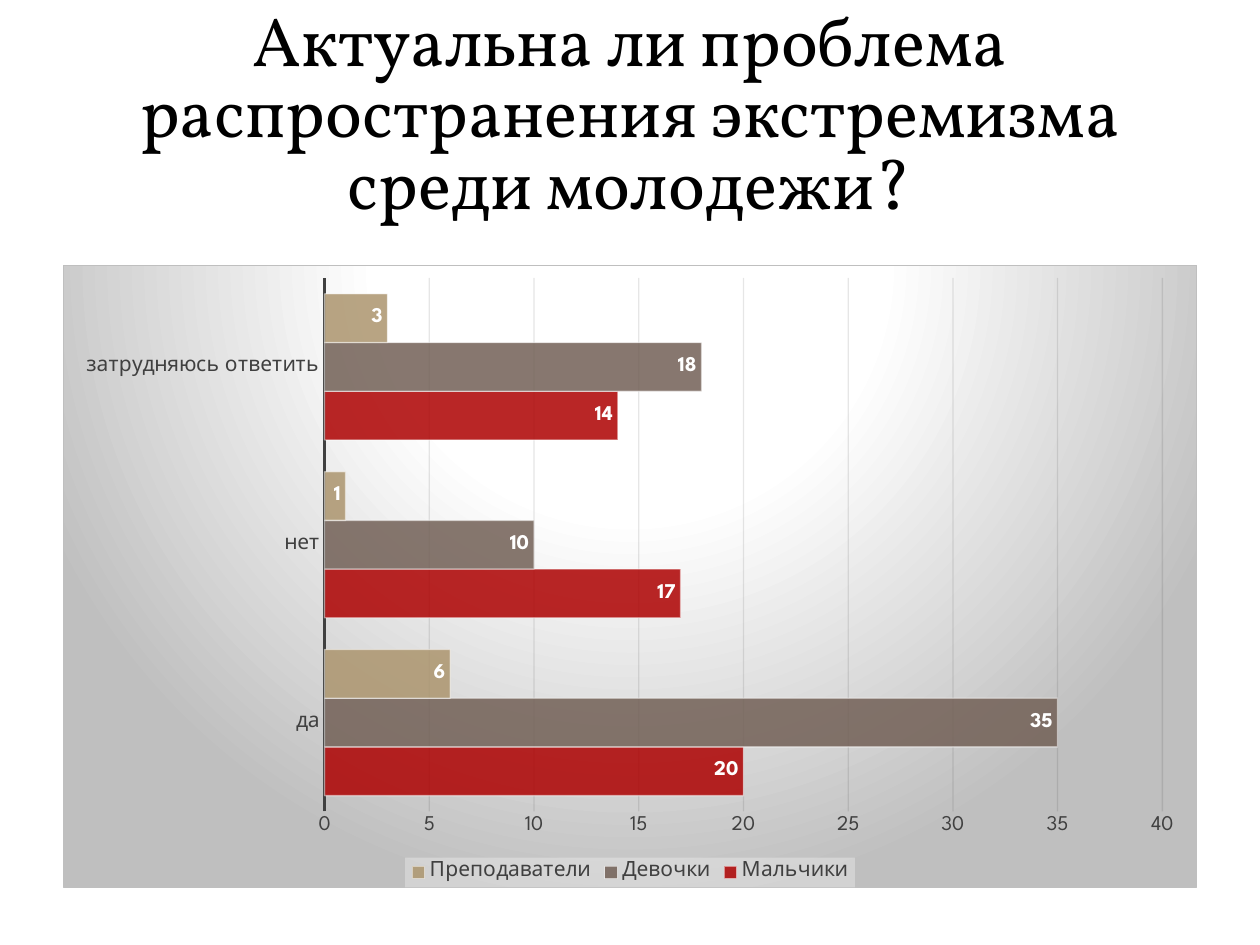
from lxml import etree
from pptx import Presentation
from pptx.chart.data import CategoryChartData
from pptx.dml.color import RGBColor
from pptx.enum.chart import (XL_CHART_TYPE, XL_LABEL_POSITION, XL_LEGEND_POSITION,
                             XL_TICK_MARK)
from pptx.enum.text import MSO_ANCHOR, PP_ALIGN
from pptx.oxml import parse_xml
from pptx.oxml.ns import nsdecls, qn
from pptx.util import Pt

BAR_CLUSTERED = XL_CHART_TYPE.BAR_CLUSTERED
INSIDE_END = XL_LABEL_POSITION.INSIDE_END
BOTTOM = XL_LEGEND_POSITION.BOTTOM
NO_TICK = XL_TICK_MARK.NONE
MIDDLE, CENTER = MSO_ANCHOR.MIDDLE, PP_ALIGN.CENTER

# Content
TITLE = "Актуальна ли проблема распространения экстремизма среди молодежи?"
ANSWERS = ["да", "нет", "затрудняюсь ответить"]
GROUPS = [  # name, votes per answer, colour
    ("Мальчики", (20, 17, 14), "AD0101"),
    ("Девочки", (35, 10, 18), "726056"),
    ("Преподаватели", (6, 1, 3), "AC956E"),
]

# Layout in px
EMU_PER_PX = 914400 // 126
SLIDE_SIZE = (1260, 945)
TITLE_BOX = (63, 38, 1134, 157)
CHART_BOX = (63, 265, 1134, 623)


class Theme:
    title_font, chart_font = "Vollkorn", "League Spartan"
    title_size, title_spacing, chart_size = 39.6, 0.86, 12
    black, white, text = "000000", "FFFFFF", "404040"
    grid, edge, legend = "0D0D0D", "BFBFBF", "F2F2F2"


def px(*lengths):
    return [length * EMU_PER_PX for length in lengths]


def style_font(font, name, size, color, bold=False):
    font.name, font.size, font.bold = name, Pt(size), bold
    font.color.rgb = RGBColor.from_string(color)


def style_line(line, color, width):
    line.color.rgb = RGBColor.from_string(color)
    line.width = Pt(width)


def set_alpha(chart, xpath, percent):
    for color in chart.element.xpath(xpath):
        etree.SubElement(color, qn("a:alpha")).set("val", str(percent * 1000))


def shape_properties(content):
    return parse_xml(f'<c:spPr {nsdecls("c", "a")}>{content}</c:spPr>')


def add_title(slide):
    text_frame = slide.shapes.add_textbox(*px(*TITLE_BOX)).text_frame
    text_frame.word_wrap = True
    text_frame.vertical_anchor = MIDDLE
    text_frame.text = TITLE
    paragraph = text_frame.paragraphs[0]
    paragraph.alignment = CENTER
    paragraph.line_spacing = Theme.title_spacing
    style_font(paragraph.runs[0].font, Theme.title_font, Theme.title_size, Theme.black)


def style_series(plot):
    for series, (_, _, color) in zip(plot.series, GROUPS):
        series.invert_if_negative = False
        series.format.fill.solid()
        series.format.fill.fore_color.rgb = RGBColor.from_string(color)
        style_line(series.format.line, Theme.white, 0.75)
        labels = series.data_labels
        labels.show_value = True
        labels.position = INSIDE_END
        style_font(labels.font, Theme.chart_font, Theme.chart_size, Theme.white, True)


def style_axes(chart):
    for axis in (chart.category_axis, chart.value_axis):
        axis.major_tick_mark = axis.minor_tick_mark = NO_TICK
        style_font(axis.tick_labels.font, Theme.chart_font, Theme.chart_size, Theme.text)
    style_line(chart.category_axis.format.line, Theme.text, 1.5)
    chart.value_axis.format.line.fill.background()
    chart.value_axis.has_major_gridlines = True
    style_line(chart.value_axis.major_gridlines.format.line, Theme.grid, 0.75)


def style_legend(chart):
    chart.has_legend = True
    legend = chart.legend
    legend.position = BOTTOM
    legend.include_in_layout = False
    style_font(legend.font, Theme.chart_font, Theme.chart_size, Theme.text)
    text_properties = chart.element.xpath("c:chart/c:legend/c:txPr")[0]
    text_properties.addprevious(shape_properties(
        f'<a:solidFill><a:srgbClr val="{Theme.legend}"/></a:solidFill>'))


def style_background(chart):
    stops = "".join(
        f'<a:gs pos="{position * 1000}"><a:srgbClr val="{color}"/></a:gs>'
        for position, color in ((0, Theme.white), (39, Theme.white), (100, Theme.edge)))
    chart.element.find(qn("c:chart")).addnext(shape_properties(
        f'<a:gradFill><a:gsLst>{stops}</a:gsLst><a:path path="circle">'
        '<a:fillToRect l="50000" t="-80000" r="50000" b="180000"/></a:path></a:gradFill>'
        f'<a:ln w="{Pt(0.75)}"><a:solidFill><a:srgbClr val="{Theme.edge}"/>'
        '</a:solidFill></a:ln>'))


def add_chart(slide):
    data = CategoryChartData()
    data.categories = ANSWERS
    for name, votes, _ in GROUPS:
        data.add_series(name, votes)
    chart = slide.shapes.add_chart(BAR_CLUSTERED, *px(*CHART_BOX), data).chart
    chart.has_title = False
    style_font(chart.font, Theme.chart_font, 10, Theme.black)
    plot = chart.plots[0]
    plot.vary_by_categories = False
    plot.gap_width = 65
    style_series(plot)
    style_axes(chart)
    style_legend(chart)
    style_background(chart)
    # Transparency
    set_alpha(chart, "//c:ser/c:spPr/a:solidFill/a:srgbClr", 85)
    set_alpha(chart, "//c:ser/c:spPr/a:ln//a:srgbClr", 50)
    set_alpha(chart, "//c:majorGridlines//a:srgbClr", 10)
    set_alpha(chart, "//c:legend/c:spPr//a:srgbClr", 39)


def main():
    presentation = Presentation()
    presentation.slide_width, presentation.slide_height = px(*SLIDE_SIZE)
    slide = presentation.slides.add_slide(presentation.slide_layouts[6])
    add_title(slide)
    add_chart(slide)
    presentation.save("out.pptx")


if __name__ == "__main__":
    main()
